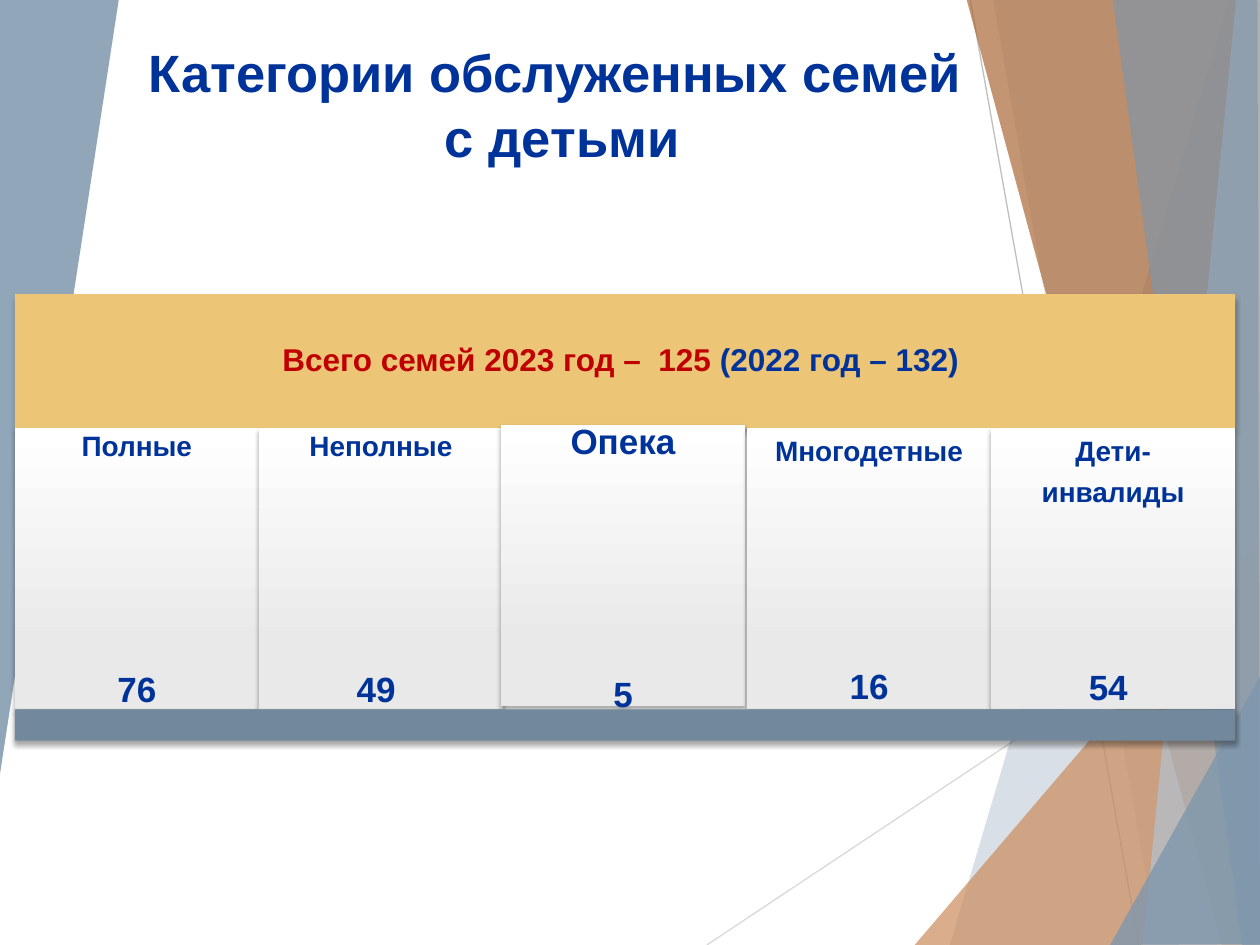
from lxml import etree
from pptx import Presentation
from pptx.dml.color import RGBColor
from pptx.enum.shapes import MSO_CONNECTOR, MSO_SHAPE
from pptx.enum.text import MSO_ANCHOR, PP_ALIGN
from pptx.oxml.ns import qn
from pptx.util import Cm, Pt

LINE = MSO_CONNECTOR.STRAIGHT
RECT = MSO_SHAPE.RECTANGLE
TOP, MID, LOW = MSO_ANCHOR.TOP, MSO_ANCHOR.MIDDLE, MSO_ANCHOR.BOTTOM
MAIN = {"name": "Arial", "bold": True}
BLUE, RED = "003399", "C00000"


def paint(item, tint, alpha=100):
    item.fill.solid()
    item.fill.fore_color.rgb = RGBColor.from_string(tint)
    item.line.fill.background()
    item.shadow.inherit = False
    if alpha < 100:
        node = item._element.spPr.find(".//" + qn("a:srgbClr"))
        etree.SubElement(node, qn("a:alpha"), val=str(alpha * 1000))


def write(para, text, size, tint=BLUE):
    para.alignment = PP_ALIGN.CENTER
    if "\v" in text:
        first, last = text.split("\v")
        write(para, first, size, tint)
        para.add_line_break()
        write(para, last, size, tint)
        return
    run = para.add_run()
    run.text = text
    for key, val in MAIN.items():
        setattr(run.font, key, val)
    run.font.size = Pt(size)
    run.font.color.rgb = RGBColor.from_string(tint)


deck = Presentation()
deck.slide_width, deck.slide_height = Cm(25.4), Cm(19.05)
slide = deck.slides.add_slide(deck.slide_layouts[6])
shapes = slide.shapes

for x1, y1, x2, y2, tint in [
    (14.25, 19.05, 25.43, 11.61, "D9D9D9"),
    (19.56, 0, 22.96, 19.05, "BFBFBF"),
]:
    ray = shapes.add_connector(LINE, Cm(x1), Cm(y1), Cm(x2), Cm(y2))
    ray.line.color.rgb = RGBColor.from_string(tint)
    ray.line.width = Pt(0.75)
    etree.SubElement(ray._element.spPr, qn("a:effectLst"))

for tint, alpha, dots in [
    ("7E97AD", 30, [(24.77, 0), (19.15, 19.05), (25.45, 19.08), (25.43, 0.03)]),
    ("7E97AD", 20, [(20.02, -0.03), (23.34, 19.05), (25.43, 19.05), (25.43, -0.03)]),
    ("CC8E60", 72, [(18.44, 19.05), (25.4, 10.9), (25.43, 19.05)]),
    ("AA6837", 70, [(19.48, -0.03), (24.64, 19.05), (25.43, 19.05), (25.43, -0.03)]),
    ("B2C1CE", 70, [(24.92, -0.03), (23.04, 19.05), (25.43, 19.05), (25.4, -0.03)]),
    ("7E97AD", 65, [(22.43, -0.03), (25.04, 19.05), (25.4, 19.05), (25.35, -0.03)]),
    ("7E97AD", 80, [(22.38, 19.05), (25.43, 13.59), (25.43, 19.03)]),
    ("7E97AD", 85, [(-0.03, 0), (2.39, -0.03), (2.39, 0.03), (-0.03, 15.8)]),
]:
    dots = [(Cm(x), Cm(y)) for x, y in dots]
    pen = shapes.build_freeform(*dots[0], scale=1.0)
    pen.add_line_segments(dots[1:], close=True)
    paint(pen.convert_to_shape(), tint, alpha)

title = shapes.add_textbox(Cm(0.36), Cm(1.37), Cm(21.95), Cm(3.4))
frame = title.text_frame
for key, val in {
    "word_wrap": True, "vertical_anchor": LOW,
    "margin_top": 0, "margin_bottom": Cm(1.38),
}.items():
    setattr(frame, key, val)
frame.paragraphs[0].line_spacing = 1.04
write(frame.paragraphs[0], "Категории обслуженных семей \vс детьми", 30)

left, wide, top, high = 0.3, 4.92, 8.63, 5.67
head = shapes.add_shape(RECT, Cm(left), Cm(5.93), Cm(5 * wide), Cm(2.7))
paint(head, "ECC577")
head.text_frame.vertical_anchor = MID
para = head.text_frame.paragraphs[0]
para.line_spacing = 0.9
write(para, "Всего семей 2023 год –  125 ", 18, RED)
write(para, "(2022 год – 132) ", 18)

panels = [head]
for col, (names, count, size, inset, gap, dx, dy) in enumerate([
    (["Полные"], "76", 16, 0.09, 120, 0, 0),
    (["Неполные"], "49 ", 16, 0.09, 120, 0, 0),
    (["Опека"], "5", 20, 0, 123, -0.04, -0.07),
    (["Многодетные"], "16", 16, 0.19, 115, 0, 0),
    (["Дети-", "инвалиды"], "54 ", 16, 0.19, 92, 0, 0),
]):
    card = shapes.add_shape(
        RECT, Cm(left + col * wide + dx), Cm(top + dy), Cm(wide), Cm(high))
    paint(card, "FFFFFF")
    card.fill.gradient()
    card.fill.gradient_angle = 270
    for stop, tint, spot in zip(
            card.fill.gradient_stops, ("FFFFFF", "E9E9E9"), (0, 0.78)):
        stop.color.rgb = RGBColor.from_string(tint)
        stop.position = spot
    frame = card.text_frame
    for key, val in {
        "word_wrap": True, "vertical_anchor": TOP, "margin_top": Cm(inset),
        "margin_bottom": 0, "margin_left": Cm(0.18), "margin_right": Cm(0.18),
    }.items():
        setattr(frame, key, val)
    rows = [(name, size, 6.3 if row else 0) for row, name in enumerate(names)]
    for row, (text, pts, space) in enumerate(rows + [(count, 20, gap)]):
        para = frame.add_paragraph() if row else frame.paragraphs[0]
        para.line_spacing = 0.9
        para.space_before = Pt(space)
        write(para, text, pts)
    panels.append(card)

foot = shapes.add_shape(
    RECT, Cm(left), Cm(top + high), Cm(5 * wide), Cm(0.63))
paint(foot, "72899D")
panels.append(foot)

for panel in panels:
    glow = etree.SubElement(
        panel._element.spPr.find(qn("a:effectLst")), qn("a:outerShdw"),
        blurRad=str(Pt(3)), dist=str(Pt(2)), dir="5400000", rotWithShape="0")
    shade = etree.SubElement(glow, qn("a:srgbClr"), val="000000")
    etree.SubElement(shade, qn("a:alpha"), val="35000")

deck.save("out.pptx")
